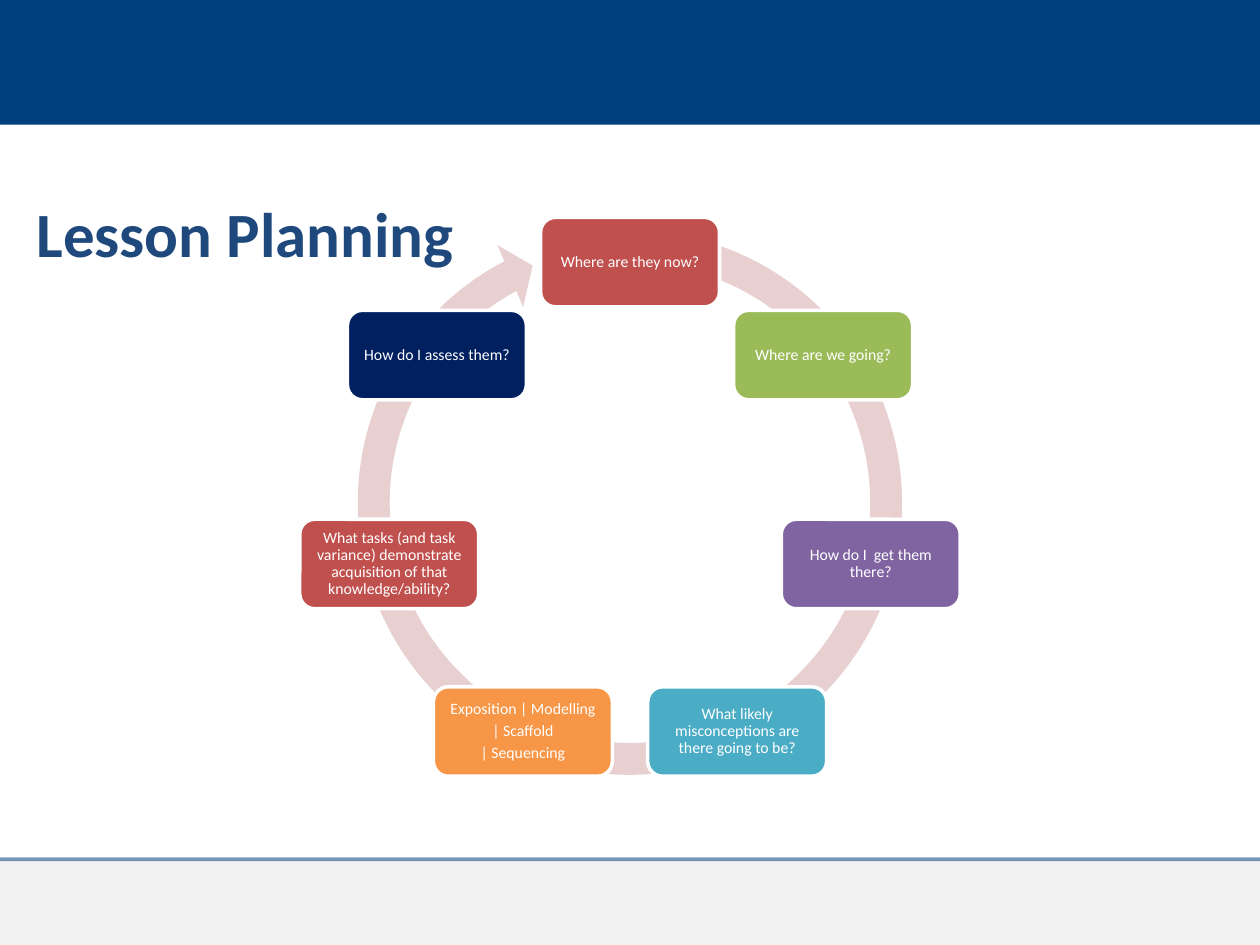
import math

from lxml import etree
from pptx import Presentation, util as u
from pptx.dml.color import RGBColor
from pptx.enum import shapes, text
from pptx.oxml.ns import qn

NAVY = RGBColor(0x00, 0x3E, 0x7E)
GREY = RGBColor(0x80, 0x80, 0x80)
TITLE = RGBColor(0x1F, 0x49, 0x7D)
PINK = RGBColor(0xE8, 0xD0, 0xD0)
WHITE = RGBColor(0xFF, 0xFF, 0xFF)
RED = RGBColor(0xC0, 0x50, 0x4D)
GREEN = RGBColor(0x9B, 0xBB, 0x59)
PURPLE = RGBColor(0x80, 0x64, 0xA2)
TEAL = RGBColor(0x4B, 0xAC, 0xC6)
ORANGE = RGBColor(0xF7, 0x96, 0x46)
DARK = RGBColor(0x00, 0x20, 0x60)

WIDE, HIGH = 10, 7.5
FOOT = 6.82
MID_X, MID_Y, RADIUS = 5, 4.04, 1.96
STEP_W, STEP_H = 1.42, 0.71

# Clockwise from the top of the ring
STEPS = [
    (RED, ["Where are they now?"]),
    (GREEN, ["Where are we going?"]),
    (PURPLE, ["How do I  get them there?"]),
    (TEAL, ["What likely misconceptions are there going to be?"]),
    (ORANGE, ["Exposition | Modelling", "| Scaffold", "| Sequencing"]),
    (RED, ["What tasks (and task variance) demonstrate acquisition of that "
           "knowledge/ability?"]),
    (DARK, ["How do I assess them?"]),
]


def write(frame, lines, size, color, bold=False, align=text.PP_ALIGN.LEFT,
          inset=None, pitch=None, after=None):
    frame.word_wrap = True
    frame.vertical_anchor = text.MSO_ANCHOR.MIDDLE
    if inset is not None:
        frame.margin_left = frame.margin_right = u.Inches(inset)
        frame.margin_top = frame.margin_bottom = u.Inches(inset)
    for i, line in enumerate(lines):
        para = frame.add_paragraph() if i else frame.paragraphs[0]
        para.text = line
        para.alignment = align
        para.line_spacing = pitch
        para.space_after = after
        font = para.font
        font.name, font.size, font.bold = "Calibri", u.Pt(size), bold
        font.color.rgb = color


def fade(part, percent):
    """Make the solid colour inside a fill or line partly opaque."""
    color = next(part.iter(qn("a:srgbClr")))
    etree.SubElement(color, qn("a:alpha"), val=str(percent * 1000))


class Deck:
    font_size = 9
    edge = 2

    def __init__(self):
        self.show = Presentation()
        self.show.slide_width = u.Inches(WIDE)
        self.show.slide_height = u.Inches(HIGH)
        self.slide = self.show.slides.add_slide(self.show.slide_layouts[5])

    def title(self, words, x, y, w, h):
        box = self.slide.shapes.title
        box.left, box.top = u.Inches(x), u.Inches(y)
        box.width, box.height = u.Inches(w), u.Inches(h)
        write(box.text_frame, [words], 36, TITLE, bold=True)

    def shape(self, kind, x, y, w, h, fill):
        item = self.slide.shapes.add_shape(
            kind, u.Inches(x), u.Inches(y), u.Inches(w), u.Inches(h))
        item.shadow.inherit = False
        item.fill.solid()
        item.fill.fore_color.rgb = fill
        item.line.fill.background()
        return item

    def band(self, y, h, fill):
        return self.shape(shapes.MSO_SHAPE.RECTANGLE, 0, y, WIDE, h, fill)

    def rule(self, y, color, width):
        line = self.slide.shapes.add_connector(
            shapes.MSO_CONNECTOR.STRAIGHT,
            0, u.Inches(y), u.Inches(WIDE), u.Inches(y))
        line.line.color.rgb = color
        line.line.width = u.Pt(width)
        etree.SubElement(line._element.spPr, qn("a:effectLst"))
        return line

    def ring(self, x, y, size, fill):
        arrow = self.shape(shapes.MSO_SHAPE.CIRCULAR_ARROW,
                           x, y, size, size, fill)
        for i, value in enumerate([0.055, 3.307, 145.298, 169.422, 0.058]):
            arrow.adjustments[i] = value

    def step(self, x, y, fill, lines):
        """Add a rounded box centred on x, y."""
        box = self.shape(shapes.MSO_SHAPE.ROUNDED_RECTANGLE,
                         x - STEP_W / 2, y - STEP_H / 2, STEP_W, STEP_H, fill)
        box.line.color.rgb = WHITE
        box.line.width = u.Pt(self.edge)
        write(box.text_frame, lines, self.font_size, WHITE,
              align=text.PP_ALIGN.CENTER, inset=0.04, pitch=0.9,
              after=u.Pt(3))


def main():
    deck = Deck()
    deck.band(0, 0.99, NAVY)
    foot = deck.band(FOOT, HIGH - FOOT, GREY)
    fade(foot._element.spPr, 10)
    rule = deck.rule(FOOT, NAVY, 2.25)
    fade(rule._element.spPr, 52)
    deck.title("Lesson Planning", 0.19, 1.3, 8.62, 1.09)

    deck.ring(2.7, 1.69, 4.6, PINK)
    for i, (fill, lines) in enumerate(STEPS):
        turn = math.tau * i / len(STEPS)
        deck.step(MID_X + RADIUS * math.sin(turn),
                  MID_Y - RADIUS * math.cos(turn), fill, lines)
    deck.show.save("out.pptx")


if __name__ == "__main__":
    main()
